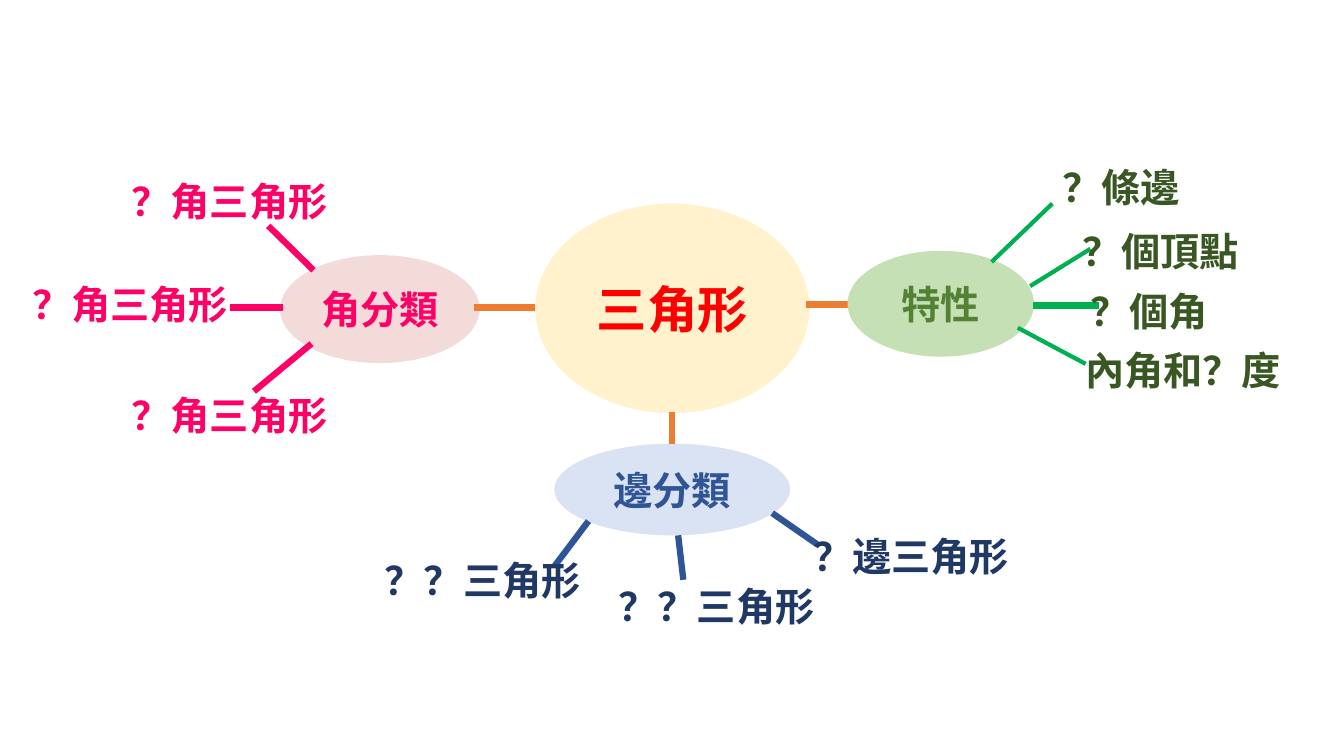
from lxml.etree import SubElement as Sub
from pptx import Presentation
from pptx.dml.color import RGBColor as RGB
from pptx.enum.shapes import MSO_CONNECTOR as Link, MSO_SHAPE as Shape
from pptx.enum.text import MSO_ANCHOR as Anchor, MSO_AUTO_SIZE as Fit, PP_ALIGN as Align
from pptx.oxml.ns import qn
from pptx.util import Cm, Pt

CREAM = RGB(0xFF, 0xF2, 0xCC)
RED = RGB(0xFF, 0x00, 0x00)
ORANGE = RGB(0xED, 0x7D, 0x31)
MINT = RGB(0xC5, 0xE0, 0xB4)
LEAF = RGB(0x54, 0x82, 0x35)
GREEN = RGB(0x00, 0xB0, 0x50)
MOSS = RGB(0x38, 0x57, 0x23)
SKY = RGB(0xDA, 0xE3, 0xF3)
BLUE = RGB(0x2F, 0x55, 0x97)
NAVY = RGB(0x20, 0x38, 0x64)
BLUSH = RGB(0xF3, 0xDB, 0xD9)
PINK = RGB(0xFF, 0x00, 0x66)


class Map:
    """Draws the parts of a mind map on one slide, with lengths in centimetres."""

    face = "Noto Sans CJK SC"
    size = 28
    thick = 4.5
    tall = 1.45

    def __init__(self, slide):
        self.shapes = slide.shapes

    def letter(self, frame, text, color, size):
        frame.word_wrap = True
        frame.text = text
        font = frame.paragraphs[0].runs[0].font
        font.name = self.face
        font.size = Pt(size)
        font.bold = True
        font.color.rgb = color
        Sub(font._element, qn("a:ea"), typeface=self.face)

    def bubble(self, text, box, fill, color, size=size):
        oval = self.shapes.add_shape(Shape.OVAL, *map(Cm, box))
        oval.shadow.inherit = False
        oval.fill.solid()
        oval.fill.fore_color.rgb = fill
        oval.line.fill.background()
        frame = oval.text_frame
        self.letter(frame, text, color, size)
        frame.vertical_anchor = Anchor.MIDDLE
        frame.paragraphs[0].alignment = Align.CENTER

    def line(self, ends, color, width=thick):
        link = self.shapes.add_connector(Link.STRAIGHT, *map(Cm, ends))
        link.line.color.rgb = color
        link.line.width = Pt(width)
        Sub(link._element.spPr, qn("a:effectLst"))

    def label(self, text, left, top, wide, color):
        box = self.shapes.add_textbox(Cm(left), Cm(top), Cm(wide), Cm(self.tall))
        self.letter(box.text_frame, text, color, self.size)
        box.text_frame.auto_size = Fit.SHAPE_TO_FIT_TEXT


def main():
    deck = Presentation()
    deck.slide_width, deck.slide_height = Cm(33.87), Cm(19.05)
    mind = Map(deck.slides.add_slide(deck.slide_layouts[6]))

    mind.bubble("三角形", (13.49, 5.13, 6.91, 5.28), CREAM, RED, 36)
    mind.line((20.32, 7.67, 22.2, 7.67), ORANGE)
    mind.bubble("特性", (21.36, 6.32, 4.7, 2.67), MINT, LEAF)
    mind.bubble("邊分類", (13.97, 11.18, 5.94, 2.31), SKY, BLUE)
    mind.bubble("角分類", (7.06, 6.43, 5.03, 2.72), BLUSH, PINK)
    mind.line((11.94, 7.75, 13.49, 7.75), ORANGE)
    mind.line((16.94, 10.39, 16.94, 11.18), ORANGE)

    mind.line((26.04, 7.7, 27.69, 7.7), GREEN)
    for ends in (
        (24.99, 6.6, 26.52, 5.13),
        (25.96, 7.21, 27.48, 6.27),
        (25.65, 8.26, 27.36, 9.17),
    ):
        mind.line(ends, GREEN, 3)
    for ends in (
        (14.83, 13.13, 13.97, 14.27),
        (17.09, 13.49, 17.22, 14.61),
        (19.46, 12.93, 20.6, 13.72),
    ):
        mind.line(ends, BLUE)
    for ends in (
        (6.76, 5.69, 7.9, 6.81),
        (5.79, 7.75, 7.14, 7.75),
        (6.4, 9.86, 7.85, 8.66),
    ):
        mind.line(ends, PINK)

    for text, left, top, wide in (
        ("？條邊", 26.52, 3.99, 4.93),
        ("？個頂點", 27.03, 5.61, 4.93),
        ("？個角", 27.23, 7.11, 4.93),
        ("內角和？度", 27.1, 8.61, 6.22),
    ):
        mind.label(text, left, top, wide, MOSS)
    for text, left, top in (
        ("？邊三角形", 20.24, 13.28),
        ("？？三角形", 15.34, 14.55),
        ("？？三角形", 9.45, 13.89),
    ):
        mind.label(text, left, top, 6.78, NAVY)
    for left, top, wide in ((3.07, 4.34, 6.78), (0.56, 6.93, 5.94), (3.07, 9.73, 6.78)):
        mind.label("？角三角形", left, top, wide, PINK)

    deck.save("out.pptx")


if __name__ == "__main__":
    main()
